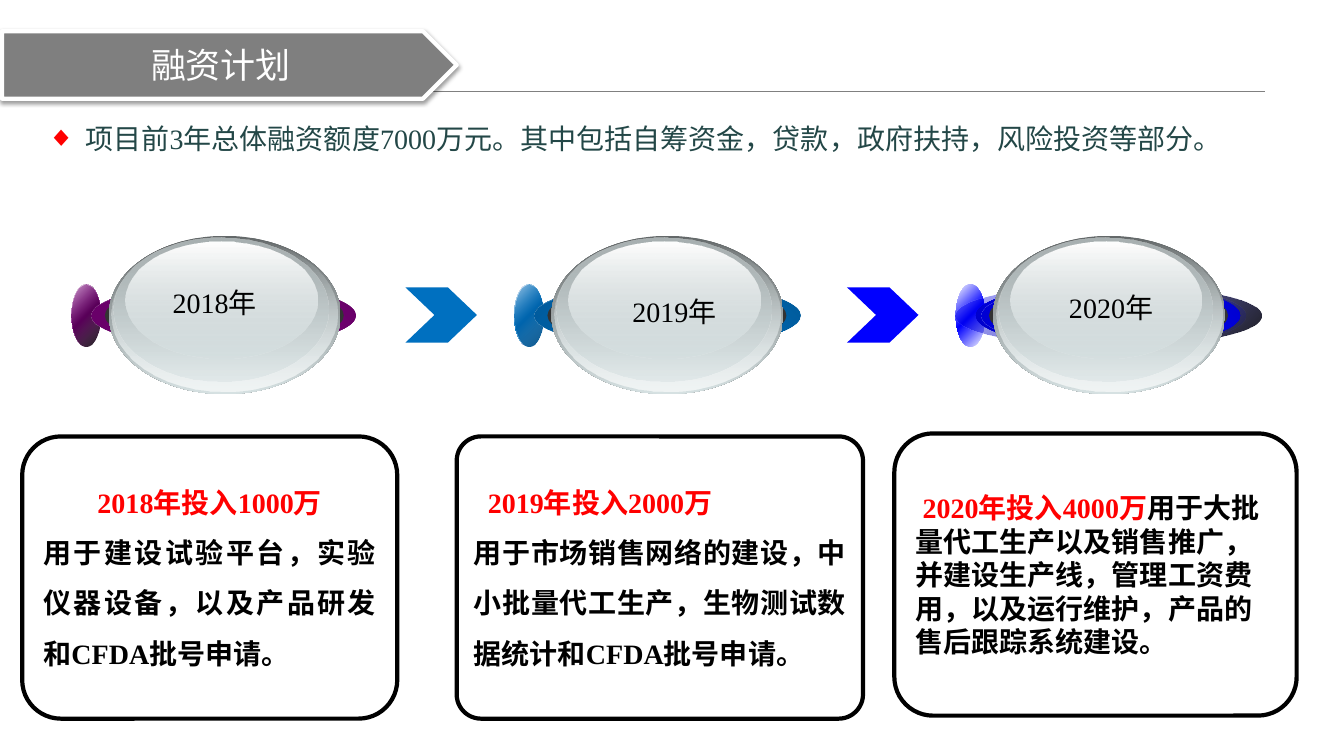
from lxml import etree
from pptx import Presentation
from pptx.dml.color import RGBColor
from pptx.enum.shapes import MSO_CONNECTOR, MSO_SHAPE
from pptx.enum.text import MSO_ANCHOR, PP_ALIGN
from pptx.oxml.ns import qn
from pptx.util import Pt

PX = 9144
LATIN, HAN = "Times New Roman", "Noto Sans CJK SC"
OVAL, CHEVRON = MSO_SHAPE.OVAL, MSO_SHAPE.CHEVRON
PENTAGON, ROUNDED = MSO_SHAPE.PENTAGON, MSO_SHAPE.ROUNDED_RECTANGLE
STRAIGHT = MSO_CONNECTOR.STRAIGHT
MIDDLE = MSO_ANCHOR.MIDDLE
LEFT, CENTER, JUSTIFY = PP_ALIGN.LEFT, PP_ALIGN.CENTER, PP_ALIGN.JUSTIFY

COLORS = {
    "white": "FFFFFF", "black": "000000", "red": "FF0000", "teal": "234747",
    "rule": "808080", "banner": "7F7F7F", "core": "333333",
    "steel": "636869", "mist": "D6E1E2", "frost": "F1F5F5", "silver": "AAB2B3",
    "blue": "0070C0", "blue_shade": "005089", "blue_rim": "005693", "blue_ring": "005C9E",
    "purple": "800080", "purple_rim": "620062", "purple_ring": "690069",
    "indigo": "0000FF", "indigo_rim": "0000C3", "indigo_ring": "0000D1",
}

GLASS = [
    ((0, 0, 230, 157), [(0, "steel", 100), (100, "mist", 100)]),
    ((3, 1, 224, 153), [(0, "mist", 0), (100, "frost", 100)]),
    ((5, 2, 213, 143), [(0, "silver", 100), (100, "mist", 48)]),
    ((17, 6, 190, 116), [(0, "white", 100), (100, "mist", 38)]),
]

STAGES = [
    {"left": 71, "hue": "purple", "shade": ("black", 90), "shade_width": 29,
     "ring_width": 262, "ring_shift": 0, "label": "2018年", "label_box": (161, 278, 104, 44)},
    {"left": 510, "hue": "blue", "shade": ("blue_shade", 100), "shade_width": 29,
     "ring_width": 264, "ring_shift": 0, "label": "2019年", "label_box": (617, 287, 104, 44)},
    {"left": 948, "hue": "indigo", "shade": ("black", 90), "shade_width": 303,
     "ring_width": 262, "ring_shift": 5, "label": "2020年", "label_box": (988, 283, 228, 44)},
]

CARDS = [
    ((22, 433, 372, 280), 0.137, [
        ({"alignment": CENTER}, 0, [("2018年投入1000万", "red")]),
        ({"alignment": JUSTIFY, "line_spacing": 1.5}, 0,
         [("用于建设试验平台，实验仪器设备，以及产品研发和CFDA批号申请。", "black")])]),
    ((453, 433, 403, 280), 0.086, [
        ({"alignment": LEFT}, 14, [("2019年投入2000万", "red")]),
        ({"alignment": JUSTIFY, "line_spacing": 1.5}, 0,
         [("用于市场销售网络的建设，中小批量代工生产，生物测试数据统计和CFDA批号申请。", "black")])]),
    ((887, 430, 399, 280), 0.137, [
        ({"alignment": LEFT}, 7,
         [("2020年投入4000万", "red"),
          ("用于大批量代工生产以及销售推广，并建设生产线，管理工资费用，"
           "以及运行维护，产品的售后跟踪系统建设。", "black")])]),
]


def rgb(name):
    """Return the named colour."""
    return RGBColor.from_string(COLORS[name])


def scaled(box):
    """Turn px lengths into EMU."""
    return [length * PX for length in box]


def add_node(parent, tag, **attributes):
    """Append a drawing element and return it."""
    return etree.SubElement(parent, qn(tag), {key: str(value) for key, value in attributes.items()})


def add_color(parent, name, opacity=100):
    """Append a colour with an opacity in percent."""
    color = add_node(parent, "a:srgbClr", val=COLORS[name])
    if opacity < 100:
        add_node(color, "a:alpha", val=opacity * 1000)


def draw_shape(page, kind, box, fill=None, line=None, adjust=None):
    """Add a flat shape with an optional fill and a 3 pt outline."""
    shape = page.shapes.add_shape(kind, *scaled(box))
    shape.shadow.inherit = False
    if fill:
        shape.fill.solid()
        shape.fill.fore_color.rgb = rgb(fill)
    else:
        shape.fill.background()
    if line:
        shape.line.color.rgb = rgb(line)
        shape.line.width = Pt(3)
    else:
        shape.line.fill.background()
    if adjust is not None:
        shape.adjustments[0] = adjust
    return shape


def draw_gradient_oval(page, box, stops, angle):
    """Add an ellipse filled with a linear gradient."""
    properties = draw_shape(page, OVAL, box).element.spPr
    gradient = etree.Element(qn("a:gradFill"), rotWithShape="1")
    stop_list = add_node(gradient, "a:gsLst")
    for position, name, opacity in stops:
        add_color(add_node(stop_list, "a:gs", pos=position * 1000), name, opacity)
    add_node(gradient, "a:lin", ang=angle * 60000, scaled=1)
    properties.replace(properties.find(qn("a:noFill")), gradient)


def add_span(para, text, color, size=20, bold=False, latin=LATIN):
    """Add formatted text to a paragraph."""
    span = para.add_run()
    span.text = text
    for key, value in {"size": Pt(size), "bold": bold, "name": latin}.items():
        setattr(span.font, key, value)
    span.font.color.rgb = rgb(color)
    add_node(span.font._element, "a:ea", typeface=HAN)


def add_text_box(page, box):
    """Add a wrapping text box and return its first paragraph."""
    frame = page.shapes.add_textbox(*scaled(box)).text_frame
    frame.word_wrap = True
    return frame.paragraphs[0]


def draw_header(page, box):
    """Draw the rule and the title banner."""
    left, top, width, height = box
    rule = page.shapes.add_connector(STRAIGHT, *scaled((110, top + 60, 1255, top + 60)))
    rule.line.color.rgb = rgb("rule")
    rule.line.width = Pt(0.75)
    add_node(rule.element.spPr, "a:effectLst")
    banner = draw_shape(page, PENTAGON, box, "banner", "white")
    effects = banner.element.spPr.find(qn("a:effectLst"))
    shadow = add_node(effects, "a:outerShdw", blurRad=Pt(3.1), dist=Pt(1.6),
                      dir=90 * 60000, algn="t", rotWithShape=0)
    add_color(shadow, "black", 38)
    banner.text_frame.vertical_anchor = MIDDLE
    para = banner.text_frame.paragraphs[0]
    para.alignment = CENTER
    add_span(para, "融资计划", "white", 25, latin=HAN)


def draw_summary(page, box):
    """Draw the bulleted summary sentence."""
    para = add_text_box(page, box)
    para.line_spacing = 1.5
    para.space_before = Pt(4)
    add_span(para, "项目前3年总体融资额度7000万元。其中包括自筹资金，贷款，"
             "政府扶持，风险投资等部分。", "teal")
    properties = para._p.get_or_add_pPr()
    properties.set("marL", str(38 * PX))
    properties.set("indent", str(-38 * PX))
    add_color(add_node(properties, "a:buClr"), "red")
    add_node(properties, "a:buFont", typeface=LATIN)
    add_node(properties, "a:buChar", char="◆")


def draw_stage(page, stage):
    """Draw one glassy year marker with its label."""
    left, top, hue, ring = stage["left"], 282, stage["hue"], stage["ring_width"]
    rim = hue + "_rim"
    layers = [
        (0, 29, [(0, "white", 100), (50, hue, 100), (100, "white", 100)], 45),
        (0, stage["shade_width"], [(0, hue, 32), (100, *stage["shade"])], 45),
        (20, ring, [(0, rim, 100), (50, hue, 100), (100, rim, 100)], 315),
        (20 + stage["ring_shift"], ring, [(0, hue + "_ring", 100), (100, hue, 0)], 45),
    ]
    for shift, width, stops, angle in layers:
        draw_gradient_oval(page, (left + shift, top, width, 62), stops, angle)
    draw_shape(page, OVAL, (left + 33, top, 237, 62), "core")
    for (shift, drop, width, height), stops in GLASS:
        draw_gradient_oval(page, (left + 37 + shift, top - 48 + drop, width, height), stops, 90)
    para = add_text_box(page, stage["label_box"])
    para.alignment = CENTER
    add_span(para, stage["label"], "black")


def draw_card(page, box, corner, paragraphs):
    """Draw one rounded card with its funding text."""
    frame = draw_shape(page, ROUNDED, box, line="black", adjust=corner).text_frame
    frame.vertical_anchor = MIDDLE
    frame.word_wrap = True
    for index, (formats, indent, spans) in enumerate(paragraphs):
        para = frame.add_paragraph() if index else frame.paragraphs[0]
        for key, value in formats.items():
            setattr(para, key, value)
        para._p.get_or_add_pPr().set("indent", str(indent * PX))
        for text, color in spans:
            add_span(para, text, color, bold=True)


def main():
    """Build the deck."""
    deck = Presentation()
    deck.slide_width, deck.slide_height = scaled((1333, 750))
    page = deck.slides.add_slide(deck.slide_layouts[6])
    draw_header(page, (2, 31, 451, 67))
    for card in CARDS:
        draw_card(page, *card)
    for left, color in ((402, "blue"), (840, "indigo")):
        draw_shape(page, CHEVRON, (left, 285, 71, 55), color, adjust=0.525)
    for stage in STAGES:
        draw_stage(page, stage)
    draw_summary(page, (37, 99, 1250, 61))
    deck.save("out.pptx")


if __name__ == "__main__":
    main()
